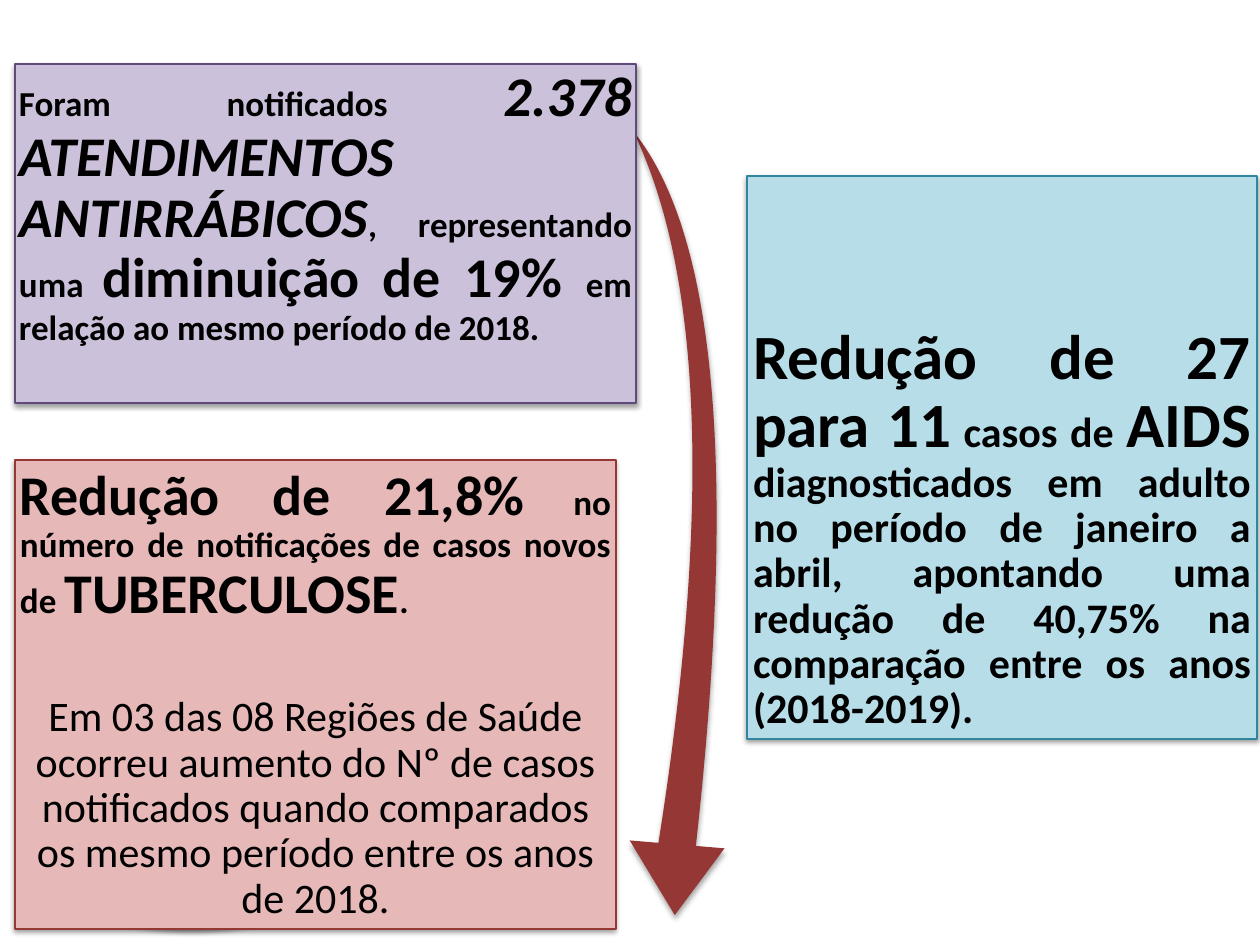
from lxml import etree
from pptx import Presentation
from pptx.dml.color import RGBColor
from pptx.enum.shapes import MSO_SHAPE
from pptx.enum.text import MSO_ANCHOR, PP_ALIGN
from pptx.oxml.ns import qn
from pptx.util import Emu, Pt

RECTANGLE, ELLIPSE, SWOOSH = MSO_SHAPE.RECTANGLE, MSO_SHAPE.OVAL, MSO_SHAPE.SWOOSH_ARROW
TOP, MIDDLE, BOTTOM = MSO_ANCHOR.TOP, MSO_ANCHOR.MIDDLE, MSO_ANCHOR.BOTTOM
JUSTIFY, CENTER = PP_ALIGN.JUSTIFY, PP_ALIGN.CENTER

BLACK = RGBColor(0x00, 0x00, 0x00)
RED = RGBColor(0x95, 0x37, 0x35)
PINK = RGBColor(0xE6, 0xB9, 0xB8)
PALE_PINK = RGBColor(0xE8, 0xD0, 0xD0)
LILAC = RGBColor(0xCC, 0xC1, 0xDA)
PURPLE = RGBColor(0x60, 0x4A, 0x7B)
LIGHT_BLUE = RGBColor(0xB7, 0xDE, 0xE8)
TEAL = RGBColor(0x31, 0x85, 0x9C)

FONT = "Calibri"
PX_PER_INCH = 126


def px(length):
    return Emu(round(length * 914400 / PX_PER_INCH))


def add_shadow(shape, opacity, distance):
    """Give the shape a soft shadow that falls straight down."""
    shape.shadow.inherit = False
    effects = shape._element.spPr.find(qn("a:effectLst"))
    shadow = etree.SubElement(
        effects, qn("a:outerShdw"), blurRad=str(Pt(3.1)), dist=str(Pt(distance)),
        dir="5400000", rotWithShape="0")
    color = etree.SubElement(shadow, qn("a:srgbClr"), val=str(BLACK))
    etree.SubElement(color, qn("a:alpha"), val=str(opacity * 1000))


def add_filled_shape(slide, kind, box, fill, line=None, opacity=35, distance=1.8):
    shape = slide.shapes.add_shape(kind, *map(px, box))
    shape.fill.solid()
    shape.fill.fore_color.rgb = fill
    if line is None:
        shape.line.fill.background()
    else:
        shape.line.color.rgb = line
        shape.line.width = Pt(0.75)
    add_shadow(shape, opacity, distance)
    return shape


def add_card(slide, box, fill, line, anchor, inset):
    """Add a bordered text card and return its text frame."""
    card = add_filled_shape(slide, RECTANGLE, box, fill, line, 38, 1.6)
    frame = card.text_frame
    frame.word_wrap = True
    frame.vertical_anchor = anchor
    frame.margin_left = frame.margin_right = px(inset)
    frame.margin_top = frame.margin_bottom = px(inset)
    return frame


def write_paragraph(paragraph, runs, alignment=JUSTIFY, bold=True):
    """Write (text, size) runs in one paragraph and return the runs."""
    paragraph.alignment = alignment
    paragraph.line_spacing = 0.9
    paragraph.font.name = FONT
    paragraph.font.bold = bold
    paragraph.font.color.rgb = BLACK
    written = []
    for text, size in runs:
        run = paragraph.add_run()
        run.text = text
        run.font.size = Pt(size)
        written.append(run)
    return written


def main():
    presentation = Presentation()
    presentation.slide_width = px(1260)
    presentation.slide_height = px(945)
    slide = presentation.slides.add_slide(presentation.slide_layouts[6])

    # Curved arrow and the ellipse behind the cards
    arrow = add_filled_shape(slide, SWOOSH, (291, 412, 761, 229), RED)
    arrow.rotation = 101.2
    arrow.adjustments[0] = 0.163
    arrow.adjustments[1] = 0.314
    add_filled_shape(slide, ELLIPSE, (65, 828, 252, 101), PALE_PINK)

    # AIDS card
    aids = add_card(slide, (747, 176, 510, 563), LIGHT_BLUE, TEAL, BOTTOM, 6)
    write_paragraph(aids.paragraphs[0], [
        ("Redução de 27 para 11", 36),
        (" casos de ", 24),
        ("AIDS", 36),
        (" diagnosticados em adulto no período de janeiro a abril, apontando uma "
         "redução de 40,75% na comparação entre os anos (2018-2019).", 24),
    ])

    # Tuberculosis card
    tuberculosis = add_card(slide, (15, 460, 601, 469), PINK, RED, MIDDLE, 5)
    write_paragraph(tuberculosis.paragraphs[0], [
        ("Redução de 21,8%", 32),
        (" no número de notificações de casos novos de ", 20),
        ("TUBERCULOSE", 32),
        (".", 20),
    ])
    regions = tuberculosis.add_paragraph()
    write_paragraph(regions, [
        ("Em 03 das 08 Regiões de Saúde ocorreu aumento do Nº de casos notificados "
         "quando comparados os mesmo período entre os anos de 2018.", 24),
    ], CENTER, bold=False)
    regions.space_before = Pt(40)

    # Rabies card
    rabies = add_card(slide, (15, 64, 621, 339), LILAC, PURPLE, TOP, 4)
    rabies_runs = write_paragraph(rabies.paragraphs[0], [
        ("Foram notificados ", 20),
        ("2.378 ATENDIMENTOS ANTIRRÁBICOS", 32),
        (", representando uma ", 20),
        ("diminuição de 19% ", 32),
        ("em relação ao mesmo período de 2018.", 20),
    ])
    rabies_runs[1].font.italic = True

    presentation.save("out.pptx")


if __name__ == "__main__":
    main()
